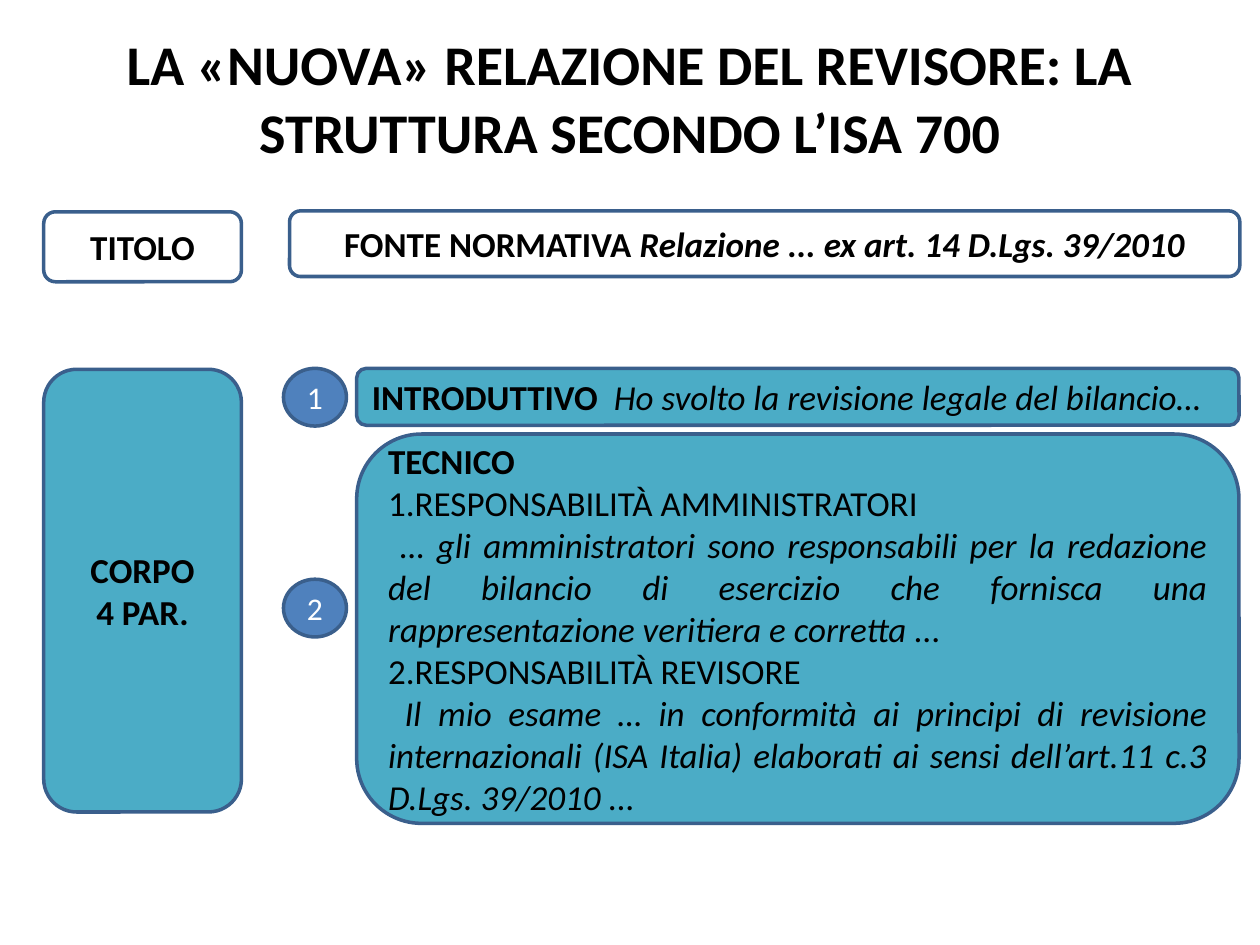
from pptx import Presentation
from pptx.dml.color import RGBColor
from pptx.enum.shapes import MSO_SHAPE as SHAPE
from pptx.enum.text import MSO_ANCHOR as ANCHOR, PP_ALIGN as ALIGN
from pptx.util import Pt

BLACK = RGBColor(0x00, 0x00, 0x00)
WHITE = RGBColor(0xFF, 0xFF, 0xFF)
TEAL = RGBColor(0x4B, 0xAC, 0xC6)
BLUE = RGBColor(0x4F, 0x81, 0xBD)
OUTLINE = RGBColor(0x3A, 0x5F, 0x8C)
FONT = "Calibri"
PLAIN, BOLD, ITALIC, BOLD_ITALIC = (0, 0), (1, 0), (0, 1), (1, 1)

LABEL_W = 113
BADGE_W, BADGE_H = 36, 33
BADGE_STEP = 41.8

INTRO = [[("INTRODUTTIVO  ", BOLD),
          ("Ho svolto la revisione legale del bilancio…", ITALIC)]]
TECHNICAL = [
    [("TECNICO", BOLD)],
    [("1.RESPONSABILITÀ AMMINISTRATORI", PLAIN)],
    [(" … gli amministratori sono responsabili per la redazione del bilancio "
      "di esercizio che fornisca una rappresentazione veritiera e corretta ...", ITALIC)],
    [("2.RESPONSABILITÀ REVISORE", PLAIN)],
    [(" Il mio esame … in conformità ai principi di revisione internazionali "
      "(ISA Italia) elaborati ai sensi dell’art.11 c.3 D.Lgs. 39/2010 ...", ITALIC)],
]


def write(tf, paragraphs, size, color, align):
    tf.word_wrap = True
    tf.vertical_anchor = ANCHOR.MIDDLE
    for i, runs in enumerate(paragraphs):
        p = tf.add_paragraph() if i else tf.paragraphs[0]
        p.alignment = align
        p.font.name, p.font.size = FONT, Pt(size)
        p.font.color.rgb = color
        for text, (bold, italic) in runs:
            r = p.add_run()
            r.text = text
            r.font.bold, r.font.italic = bool(bold), bool(italic)


def add_box(s, box, paragraphs, fill, align=ALIGN.CENTER,
            kind=SHAPE.ROUNDED_RECTANGLE, size=20, color=BLACK):
    sp = s.shapes.add_shape(kind, *map(Pt, box))
    sp.shadow.inherit = False
    sp.fill.solid()
    sp.fill.fore_color.rgb = fill
    sp.line.color.rgb = OUTLINE
    sp.line.width = Pt(2)
    write(sp.text_frame, paragraphs, size, color, align)


def add_title(s, box):
    sp = s.shapes.title
    sp.left, sp.top, sp.width, sp.height = map(Pt, box)
    text = "LA «NUOVA» RELAZIONE DEL REVISORE: LA STRUTTURA SECONDO L’ISA 700"
    write(sp.text_frame, [[(text, BOLD)]], 32, BLACK, ALIGN.CENTER)


def add_heading_row(s, box):
    x, y, w, h = box
    source_x = 140.5
    add_box(s, (x, y + 0.5, LABEL_W, h), [[("TITOLO", BOLD)]], WHITE)
    add_box(s, (x + source_x, y, w - source_x, h - 2.5),
            [[("FONTE NORMATIVA ", BOLD),
              ("Relazione ... ex art. 14 D.Lgs. 39/2010", BOLD_ITALIC)]], WHITE)


def add_body(s, box):
    x, y, w, h = box
    badge_x = x + 137
    text_x = badge_x + BADGE_STEP
    text_w = x + w - text_x
    add_box(s, (x, y + 0.5, LABEL_W, 253),
            [[("CORPO", BOLD)], [("4 PAR.", BOLD)]], TEAL)
    sections = [(0, 32.5, 0, INTRO, ALIGN.LEFT),
                (37.5, h - 37.5, 120.5, TECHNICAL, ALIGN.JUSTIFY)]
    for number, (dy, height, badge_dy, paragraphs, align) in enumerate(sections, 1):
        add_box(s, (badge_x, y + badge_dy, BADGE_W, BADGE_H),
                [[(str(number), PLAIN)]], BLUE, kind=SHAPE.OVAL, size=18, color=WHITE)
        add_box(s, (text_x, y + dy, text_w, height), paragraphs, TEAL, align)


def main():
    prs = Presentation()
    prs.slide_width, prs.slide_height = Pt(720), Pt(540)
    s = prs.slides.add_slide(prs.slide_layouts[5])
    add_title(s, (0, 34, 720, 43))
    add_heading_row(s, (25, 120.5, 683.5, 40))
    add_body(s, (25, 210.5, 683, 260))
    prs.save("out.pptx")


if __name__ == "__main__":
    main()
